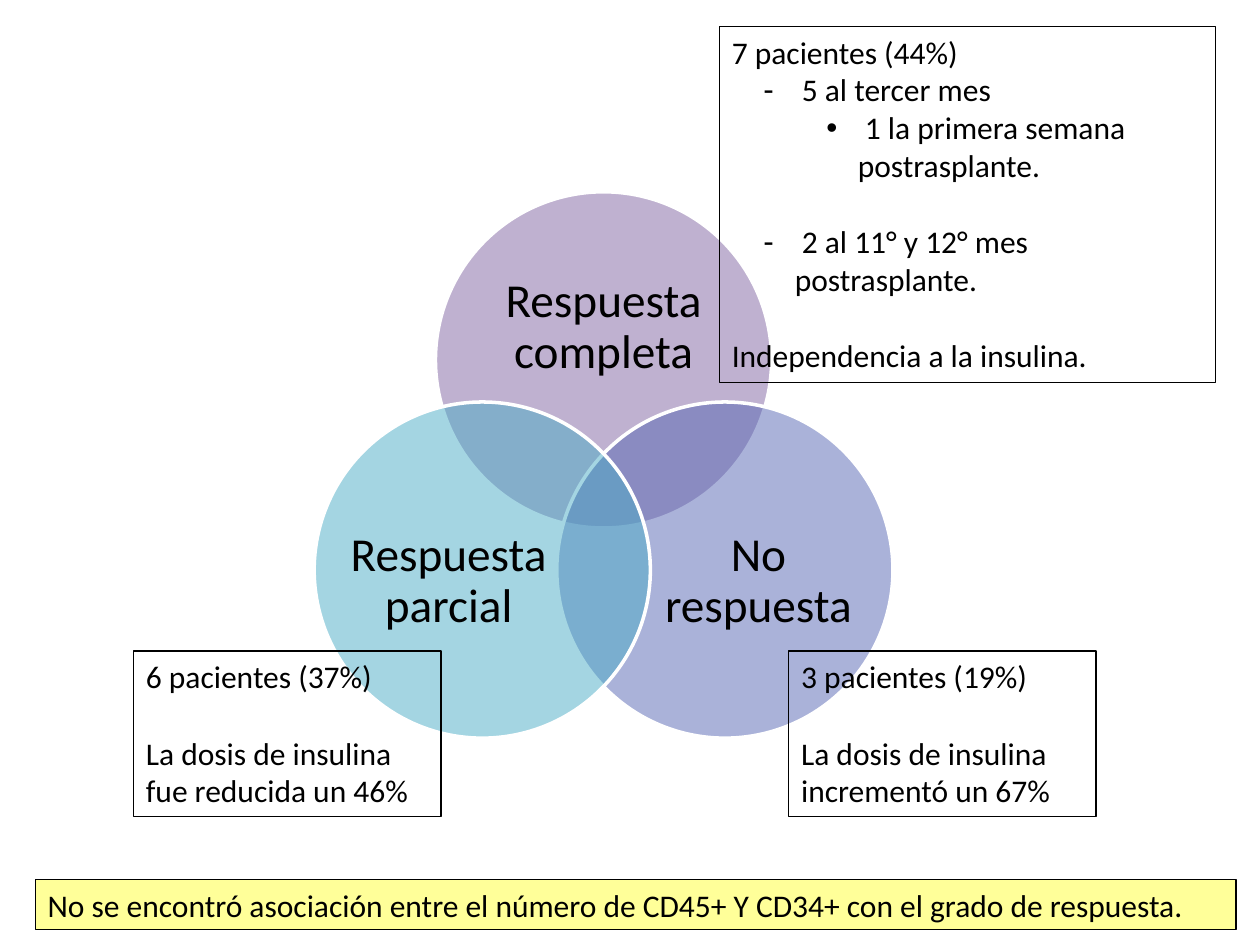
"""Build a slide of treatment responses as a three-circle Venn diagram with notes."""
import math
from collections import namedtuple

from lxml import etree
from pptx import Presentation
from pptx import util as u
from pptx.dml.color import RGBColor
from pptx.enum import shapes, text
from pptx.oxml import ns

BLACK = RGBColor(0x00, 0x00, 0x00)
WHITE = RGBColor(0xFF, 0xFF, 0xFF)
YELLOW = RGBColor(0xFF, 0xFF, 0x99)
PURPLE = RGBColor(0x80, 0x64, 0xA2)
INDIGO = RGBColor(0x57, 0x67, 0xB4)
TEAL = RGBColor(0x4B, 0xAC, 0xC6)

FONT = "Calibri"
WIDTH, HEIGHT = 10, 7.5
BLANK_LINE = 22

Box = namedtuple("Box", "left top width height")


def share(box, left, top, width, height):
    """Return the part of a box given as shares of its width and height."""
    return Box(box.left + left * box.width, box.top + top * box.height,
               width * box.width, height * box.height)


def emu(box):
    """Convert a box in inches to slide lengths."""
    return [u.Inches(length) for length in box]


def add_paragraph(frame, words, size=18, align=text.PP_ALIGN.LEFT, spacing=None,
                  before=0, level=0, bullet=None):
    """Write one paragraph, using the frame's first one while it is empty."""
    paragraph = frame.paragraphs[0]
    if paragraph.runs:
        paragraph = frame.add_paragraph()
    paragraph.alignment = align
    paragraph.line_spacing = spacing
    paragraph.space_before = u.Pt(before)
    paragraph.level = level
    run = paragraph.add_run()
    run.text = words
    run.font.name, run.font.size = FONT, u.Pt(size)
    run.font.color.rgb = BLACK
    if bullet:
        properties = paragraph._p.get_or_add_pPr()
        properties.set("marL", str(u.Inches(0.5 * level)))
        properties.set("indent", str(u.Inches(-0.25)))
        font = etree.SubElement(properties, ns.qn("a:buFont"))
        font.set("typeface", "Arial")
        etree.SubElement(properties, ns.qn("a:buChar")).set("char", bullet)


def add_outlined(slide, kind, box, fill=None, line=BLACK, weight=0.75):
    """Add a flat preset shape with an outline and an optional fill."""
    shape = slide.shapes.add_shape(kind, *emu(box))
    shape.shadow.inherit = False
    shape.line.color.rgb = line
    shape.line.width = u.Pt(weight)
    if fill is None:
        shape.fill.background()
    else:
        shape.fill.solid()
        shape.fill.fore_color.rgb = fill
    return shape


def add_circle(slide, box, color, label, label_area):
    """Add a half-transparent circle and its centred label."""
    circle = add_outlined(slide, shapes.MSO_SHAPE.OVAL, box, color, WHITE, 2)
    color_node = circle._element.spPr.find(ns.qn("a:solidFill"))[0]
    etree.SubElement(color_node, ns.qn("a:alpha")).set("val", "50000")
    frame = slide.shapes.add_textbox(*emu(share(box, *label_area))).text_frame
    frame.word_wrap = True
    frame.vertical_anchor = text.MSO_ANCHOR.MIDDLE
    frame.margin_left = frame.margin_right = frame.margin_top = frame.margin_bottom = 0
    add_paragraph(frame, label, size=27, align=text.PP_ALIGN.CENTER, spacing=0.9)


def add_venn(slide, box):
    """Place three circles at equal angles around the middle of a box."""
    diameter = 0.58 * box.width
    orbit = diameter * 5 / 12
    center_x = box.left + box.width / 2
    center_y = box.top + diameter / 2 + orbit
    circles = [
        (PURPLE, "Respuesta completa", (0.13, 0.18, 0.74, 0.45)),
        (INDIGO, "No respuesta", (0.3, 0.26, 0.6, 0.55)),
        (TEAL, "Respuesta parcial", (0.1, 0.26, 0.6, 0.55)),
    ]
    for index, (color, label, label_area) in enumerate(circles):
        angle = math.radians(120 * index - 90)
        circle = Box(center_x + orbit * math.cos(angle) - diameter / 2,
                     center_y + orbit * math.sin(angle) - diameter / 2,
                     diameter, diameter)
        add_circle(slide, circle, color, label, label_area)


def add_note(slide, box, paragraphs, fill=None):
    """Add an outlined box holding paragraphs of words and format."""
    shape = add_outlined(slide, shapes.MSO_SHAPE.RECTANGLE, box, fill)
    frame = shape.text_frame
    frame.word_wrap = True
    frame.vertical_anchor = text.MSO_ANCHOR.TOP
    for words, options in paragraphs:
        add_paragraph(frame, words, **options)


def build_slide(slide, page):
    """Lay out the diagram, the three notes and the conclusion on the page."""
    gap = {"before": BLANK_LINE}
    add_venn(slide, share(page, 0.249, 0.203, 0.46, 0.58))
    add_note(slide, share(page, 0.571, 0.028, 0.394, 0.377), [
        ("7 pacientes (44%)", {}),
        (" 5 al tercer mes", {"level": 1, "bullet": "-"}),
        (" 1 la primera semana postrasplante.", {"level": 2, "bullet": "•"}),
        (" 2 al 11° y 12° mes postrasplante.", {"level": 1, "bullet": "-", **gap}),
        ("Independencia a la insulina.", gap),
    ])
    lower_notes = [
        (0.106, "6 pacientes (37%)", "La dosis de insulina fue reducida un 46%"),
        (0.626, "3 pacientes (19%)", "La dosis de insulina incrementó un 67%"),
    ]
    for left, count, dose in lower_notes:
        add_note(slide, share(page, left, 0.689, 0.244, 0.175), [(count, {}), (dose, gap)])
    conclusion = ("No se encontró asociación entre el número de CD45+ Y CD34+ "
                  "con el grado de respuesta.")
    add_note(slide, share(page, 0.028, 0.931, 0.953, 0.053), [(conclusion, {})], YELLOW)


def main():
    """Create and save the presentation."""
    presentation = Presentation()
    presentation.slide_width = u.Inches(WIDTH)
    presentation.slide_height = u.Inches(HEIGHT)
    slide = presentation.slides.add_slide(presentation.slide_layouts[6])
    build_slide(slide, Box(0, 0, WIDTH, HEIGHT))
    presentation.save("out.pptx")


if __name__ == "__main__":
    main()
